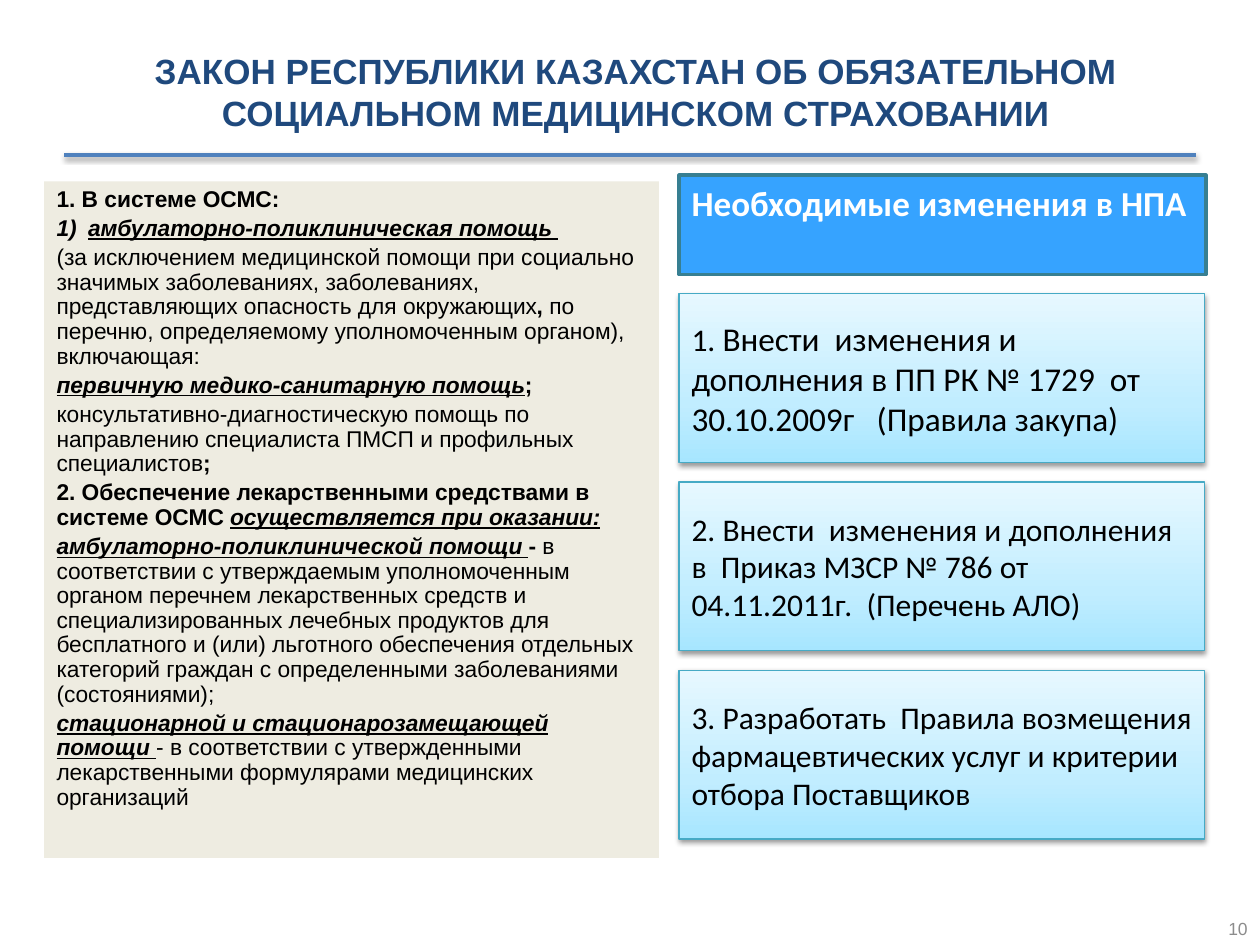
from lxml.etree import SubElement
from pptx import Presentation
from pptx.dml.color import RGBColor
from pptx.enum.shapes import MSO_CONNECTOR, MSO_SHAPE
from pptx.enum.text import MSO_ANCHOR, MSO_AUTO_SIZE, PP_ALIGN
from pptx.oxml.ns import qn
from pptx.util import Inches, Pt

THEME = {
    "title": "1F497D", "rule": "4F81BD", "panel": "EEECE1", "text": "000000",
    "header": "36A3FF", "header_line": "377F92", "header_text": "FFFFFF",
    "card_line": "46AAC5", "number": "8C8C8C",
    "card_stops": [(0, "A7E6FF"), (35, "C1EDFF"), (100, "E7F8FF")],
    "title_size": 20, "panel_size": 13, "header_size": 20,
    "card_size": 18, "card_large": 19, "number_size": 10,
}


def add_span(para, text, size, color=THEME["text"], font="Arial", style=""):
    """Add a run; style holds any of the letters b, i and u."""
    span = para.add_run()
    span.text = text
    span.font.name = font
    span.font.size = Pt(size)
    span.font.color.rgb = RGBColor.from_string(color)
    span.font.bold = "b" in style
    span.font.italic = "i" in style
    span.font.underline = "u" in style


def add_shadow(item):
    """Give a finished shape or connector a soft shadow below it."""
    effects = SubElement(item._element.spPr, qn("a:effectLst"))
    shadow = SubElement(effects, qn("a:outerShdw"), blurRad=str(Pt(3.1)),
                        dist=str(Pt(1.6)), dir="5400000", rotWithShape="0")
    color = SubElement(shadow, qn("a:srgbClr"), val="000000")
    SubElement(color, qn("a:alpha"), val="38000")


deck = Presentation()
deck.slide_width, deck.slide_height = Inches(10), Inches(7.5)
page = deck.slides.add_slide(deck.slide_layouts[5])

# Title and the rule below it
title = page.shapes.title
title.left, title.top = Inches(0.59), Inches(0.3)
title.width, title.height = Inches(8.91), Inches(0.85)
title.text_frame.auto_size = MSO_AUTO_SIZE.NONE
title.text_frame.vertical_anchor = MSO_ANCHOR.MIDDLE
para = title.text_frame.paragraphs[0]
para.alignment = PP_ALIGN.CENTER
add_span(para, "ЗАКОН РЕСПУБЛИКИ КАЗАХСТАН ОБ ОБЯЗАТЕЛЬНОМ СОЦИАЛЬНОМ МЕДИЦИНСКОМ СТРАХОВАНИИ",
         THEME["title_size"], THEME["title"], style="b")

rule = page.shapes.add_connector(MSO_CONNECTOR.STRAIGHT, Inches(0.51), Inches(1.23),
                                 Inches(9.49), Inches(1.23))
rule.line.color.rgb = RGBColor.from_string(THEME["rule"])
rule.line.width = Pt(2)
add_shadow(rule)

# Left panel: provisions of the law
panel = page.shapes.add_shape(MSO_SHAPE.RECTANGLE, Inches(0.35), Inches(1.44),
                              Inches(4.88), Inches(5.37))
panel.shadow.inherit = False
panel.fill.solid()
panel.fill.fore_color.rgb = RGBColor.from_string(THEME["panel"])
panel.line.fill.background()
frame = panel.text_frame
frame.word_wrap = True
frame.vertical_anchor = MSO_ANCHOR.TOP

NUMBERED = 1
provisions = [
    [("1. В системе ОСМС:", "b")],
    [("амбулаторно-поликлиническая помощь ", "biu")],
    [("(за исключением медицинской помощи при социально значимых заболеваниях, "
      "заболеваниях, представляющих опасность для окружающих", ""), (", ", "b"),
     ("по перечню, определяемому уполномоченным органом), включающая:", "")],
    [("первичную медико-санитарную помощь", "biu"), (";", "b")],
    [("консультативно-диагностическую помощь по направлению специалиста ПМСП "
      "и профильных специалистов", ""), (";", "b")],
    [("2. Обеспечение лекарственными средствами в системе ОСМС ", "b"),
     ("осуществляется при оказании:", "biu")],
    [("амбулаторно-поликлинической помощи ", "biu"), ("- ", "b"),
     ("в соответствии с утверждаемым уполномоченным органом перечнем лекарственных "
      "средств и специализированных лечебных продуктов для бесплатного и (или) "
      "льготного обеспечения отдельных категорий граждан с определенными "
      "заболеваниями (состояниями);", "")],
    [("стационарной и стационарозамещающей помощи ", "biu"),
     ("- в соответствии с утвержденными лекарственными формулярами медицинских "
      "организаций", "")],
]
for index, spans in enumerate(provisions):
    para = frame.add_paragraph() if index else frame.paragraphs[0]
    para.alignment = PP_ALIGN.LEFT
    para.line_spacing = 0.9
    para.space_before = Pt(0.2 * THEME["panel_size"] if index else 0)
    if index == NUMBERED:
        properties = para._p.get_or_add_pPr()
        properties.set("marL", str(Inches(0.25)))
        properties.set("indent", str(Inches(-0.25)))
        SubElement(properties, qn("a:buFont"), typeface="+mj-lt")
        SubElement(properties, qn("a:buAutoNum"), type="arabicParenR")
    for text, style in spans:
        add_span(para, text, THEME["panel_size"], style=style)

# Right column: header
header = page.shapes.add_shape(MSO_SHAPE.RECTANGLE, Inches(5.39), Inches(1.39),
                               Inches(4.18), Inches(0.79))
header.shadow.inherit = False
header.fill.solid()
header.fill.fore_color.rgb = RGBColor.from_string(THEME["header"])
header.line.color.rgb = RGBColor.from_string(THEME["header_line"])
header.line.width = Pt(2)
header.text_frame.word_wrap = True
header.text_frame.vertical_anchor = MSO_ANCHOR.TOP
para = header.text_frame.paragraphs[0]
para.alignment = PP_ALIGN.LEFT
add_span(para, "Необходимые изменения в НПА", THEME["header_size"],
         THEME["header_text"], "Calibri", "b")

# Right column: three equally spaced cards
cards = [
    [("1. ", THEME["card_size"]),
     ("Внести  изменения и дополнения в ПП РК № 1729  от 30.10.2009г   (Правила закупа)",
      THEME["card_large"])],
    [("2. Внести  изменения и дополнения в  Приказ МЗСР № 786 от 04.11.2011г.  (Перечень АЛО)",
      THEME["card_size"])],
    [("3. Разработать  Правила возмещения фармацевтических услуг и критерии отбора Поставщиков",
      THEME["card_size"])],
]
for index, spans in enumerate(cards):
    card = page.shapes.add_shape(MSO_SHAPE.RECTANGLE, Inches(5.39),
                                 Inches(2.33 + 1.495 * index), Inches(4.17), Inches(1.34))
    card.fill.gradient()
    card.fill.gradient_angle = 90
    stops = card._element.spPr.find(".//" + qn("a:gsLst"))
    for stop in list(stops):
        stops.remove(stop)
    for position, color in THEME["card_stops"]:
        stop = SubElement(stops, qn("a:gs"), pos=str(position * 1000))
        SubElement(stop, qn("a:srgbClr"), val=color)
    card.line.color.rgb = RGBColor.from_string(THEME["card_line"])
    card.line.width = Pt(0.75)
    add_shadow(card)
    card.text_frame.word_wrap = True
    card.text_frame.vertical_anchor = MSO_ANCHOR.MIDDLE
    para = card.text_frame.paragraphs[0]
    para.alignment = PP_ALIGN.LEFT
    for text, size in spans:
        add_span(para, text, size, font="Calibri")

# Page number
number = page.shapes.add_textbox(Inches(8.62), Inches(7.14), Inches(1.38), Inches(0.36))
number.text_frame.word_wrap = True
number.text_frame.vertical_anchor = MSO_ANCHOR.BOTTOM
para = number.text_frame.paragraphs[0]
para.alignment = PP_ALIGN.RIGHT
add_span(para, "10", THEME["number_size"], THEME["number"])

deck.save("out.pptx")
